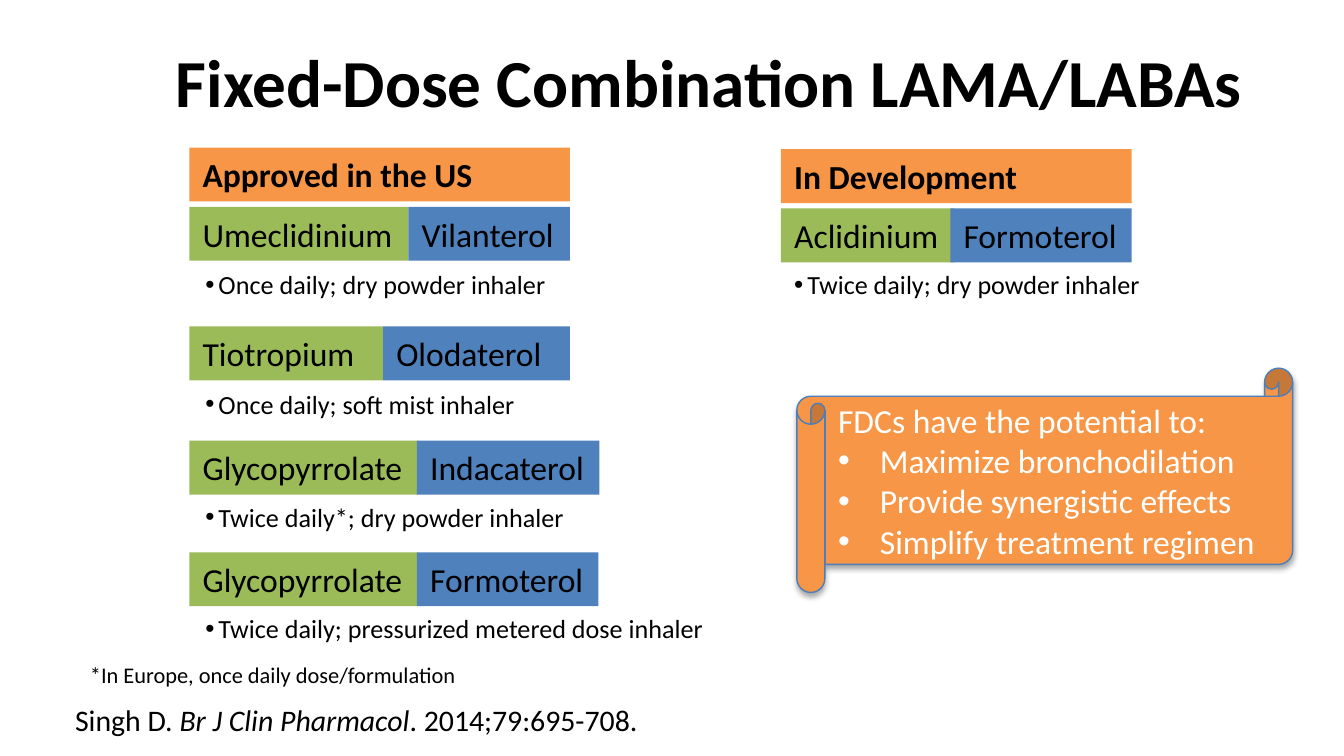
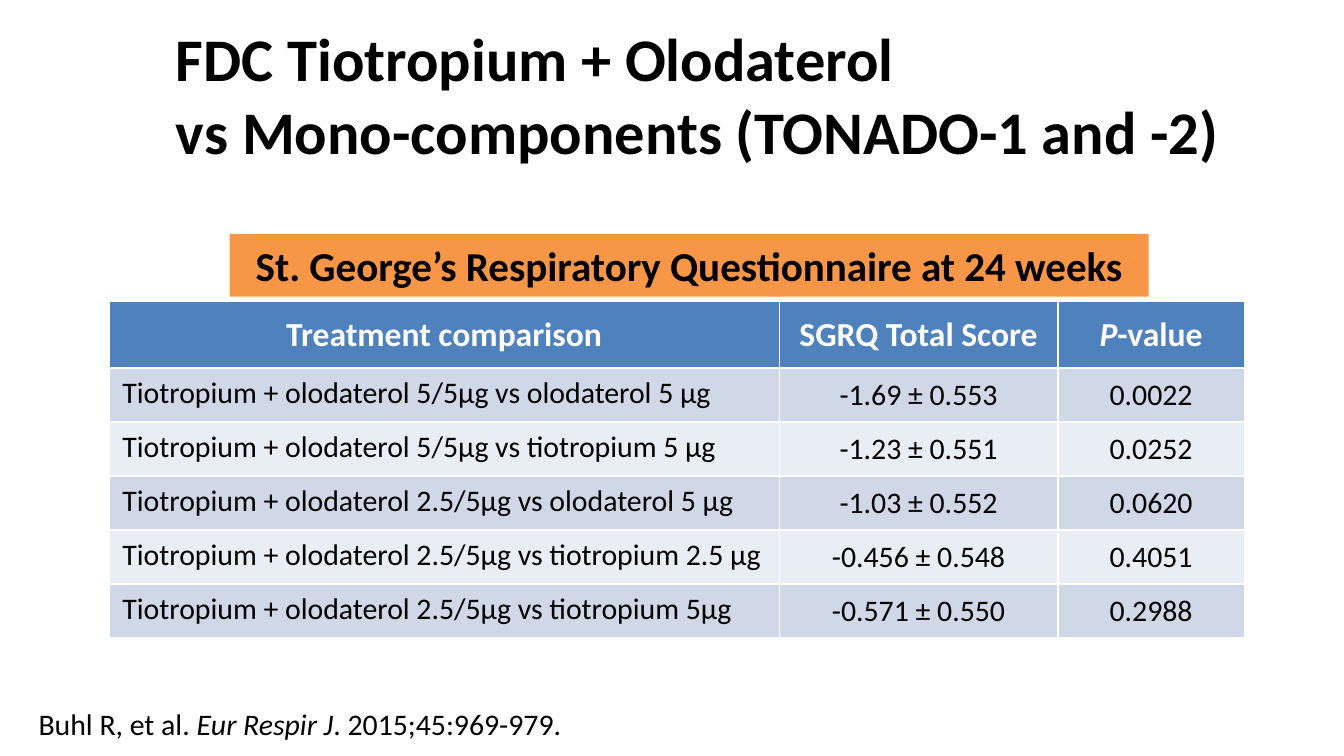
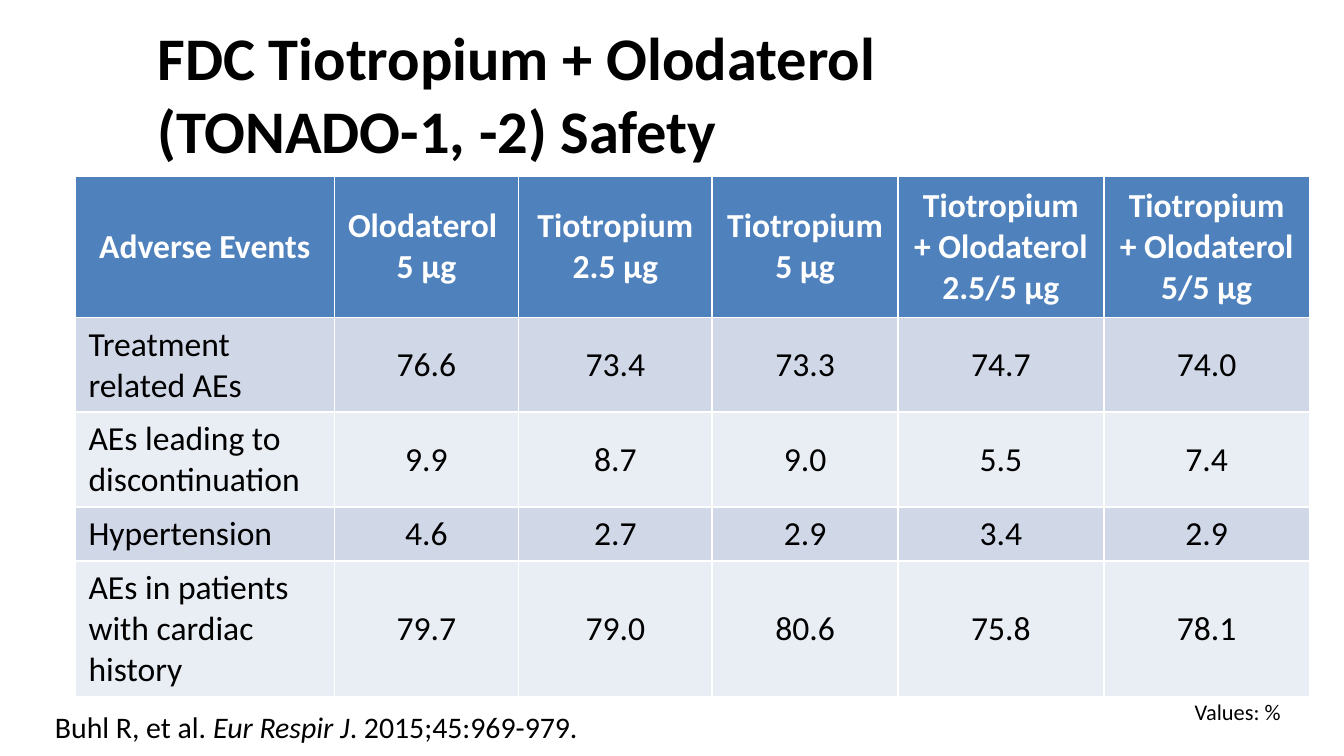
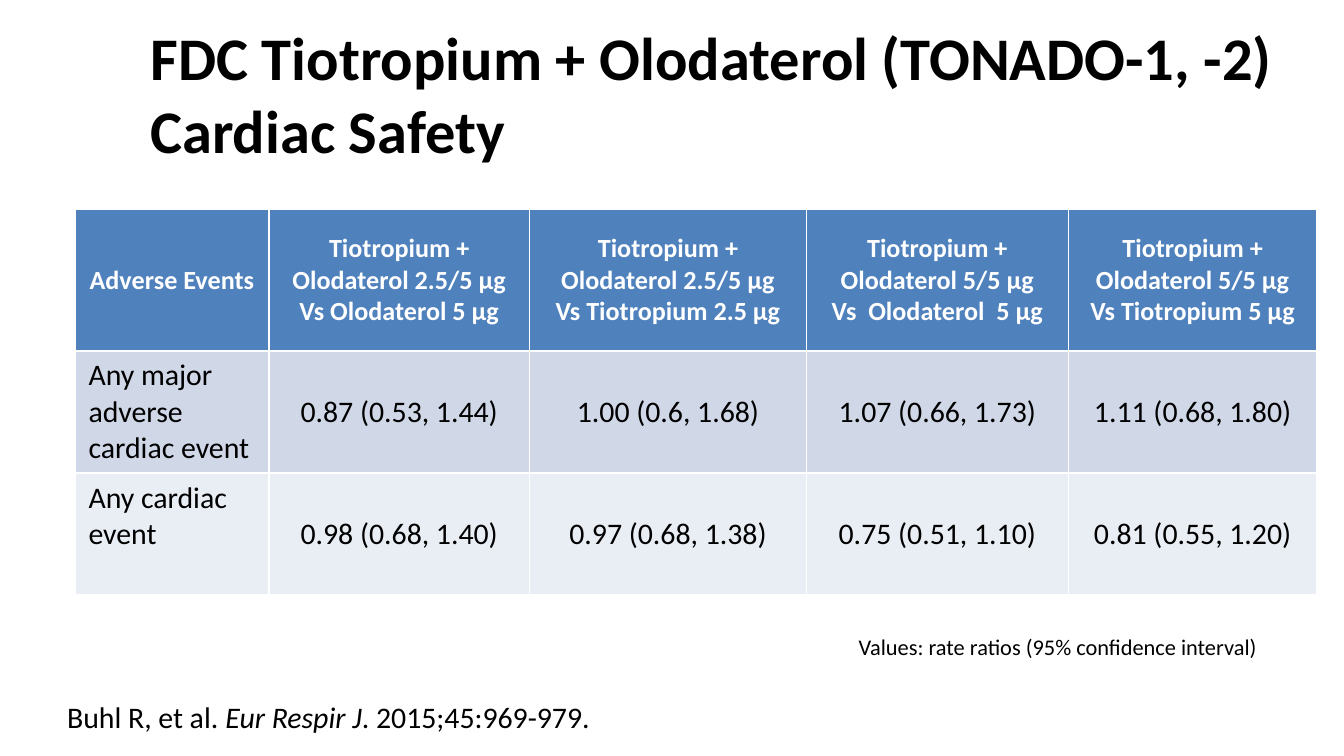
"""Build four slides on fixed-dose LAMA/LABA combinations."""
from copy import deepcopy

from lxml.etree import SubElement
from pptx import Presentation
from pptx.dml.color import RGBColor
from pptx.enum.shapes import MSO_SHAPE
from pptx.enum.text import MSO_ANCHOR, MSO_AUTO_SIZE, PP_ALIGN
from pptx.oxml.ns import qn
from pptx.util import Cm, Pt

FONT = "Calibri"
BLACK, WHITE = "000000", "FFFFFF"
ORANGE, GREEN, BLUE = "F79646", "9BBB59", "4F81BD"
BANDS = ("D0D8E8", "E9EDF4")
ROW_HEIGHT = 1.02
BOX_HEIGHT = 1.02
BULLET_HEIGHT = 0.86


def paint(fill, color):
    fill.solid()
    fill.fore_color.rgb = RGBColor.from_string(color)


def write(frame, text, size=18, bold=False, color=BLACK, align=PP_ALIGN.LEFT,
          anchor=MSO_ANCHOR.TOP, indents=()):
    """Fill a frame: newlines split paragraphs, \\v breaks lines, _ marks italics.

    Each entry of indents gives the left margin of one bulleted paragraph, or None.
    """
    frame.word_wrap = True
    frame.vertical_anchor = anchor
    for index, line in enumerate(text.split("\n")):
        para = frame.paragraphs[0] if index == 0 else frame.add_paragraph()
        para.alignment = align
        if indents and indents[index] is not None:
            properties = para._p.get_or_add_pPr()
            properties.set("marL", str(Cm(indents[index])))
            properties.set("indent", str(Cm(-0.79)))
            SubElement(properties, qn("a:buFont"), typeface="Arial")
            SubElement(properties, qn("a:buChar"), char="•")
        for row, part in enumerate(line.split("\v")):
            if row:
                para.add_line_break()
            for order, piece in enumerate(part.split("_")):
                if piece:
                    span = para.add_run()
                    span.text = piece
                    span.font.name = FONT
                    span.font.size = Pt(size)
                    span.font.bold = bold
                    span.font.italic = order % 2 == 1
                    paint(span.font.fill, color)
        for line_break in para._p.findall(qn("a:br")):
            line_break.append(deepcopy(span._r.rPr))


deck = Presentation()
deck.slide_width, deck.slide_height = Cm(25.4), Cm(14.29)

SINGH = "Singh D. _Br J Clin Pharmacol_. 2014;79:695-708."
BUHL = "Buhl R, et al. _Eur Respir J_. 2015;45:969-979."
openings = [
    ("Fixed-Dose Combination LAMA/LABAs", 36, (3.07, 0.33, 21.06), SINGH, (1.17, 13.13, 11.28)),
    ("FDC Tiotropium + Olodaterol \vvs Mono-components (TONADO-1 and -2)", 32.4,
     (3.07, 0.58, 21.06), BUHL, (0.48, 13.21, 10.57)),
    ("FDC Tiotropium + Olodaterol \v(TONADO-1, -2) Safety", 32.4,
     (2.72, 0.56, 22.35), BUHL, (0.79, 13.28, 10.57)),
    ("FDC Tiotropium + Olodaterol (TONADO-1, -2)\vCardiac Safety", 32.4,
     (2.59, 0.56, 22.35), BUHL, (1.02, 13.08, 10.57)),
]
pages = []
for heading, size, (left, top, width), citation, place in openings:
    page = deck.slides.add_slide(deck.slide_layouts[5])
    title = page.shapes.title
    title.left, title.top, title.width, title.height = Cm(left), Cm(top), Cm(width), Cm(2.39)
    title.text_frame.auto_size = MSO_AUTO_SIZE.NONE
    write(title.text_frame, heading, size=size, bold=True, anchor=MSO_ANCHOR.MIDDLE)
    box = page.shapes.add_textbox(*map(Cm, place), Cm(0.94))
    write(box.text_frame, citation, size=16)
    pages.append(page)
overview, efficacy, safety, cardiac = pages

notes = [
    (overview, "*In Europe, once daily dose/formulation", 1.45, 12.37, 7.49),
    (safety, "Values: %", 22.33, 13.08, 2.2),
    (cardiac, "Values: rate ratios (95% confidence interval)", 15.98, 11.84, 8.13),
]
for page, text, left, top, width in notes:
    box = page.shapes.add_textbox(Cm(left), Cm(top), Cm(width), Cm(0.76))
    write(box.text_frame, text, size=12)

banners = [
    (overview, "Approved in the US", 18, PP_ALIGN.LEFT, (3.58, 2.79, 7.19, BOX_HEIGHT)),
    (overview, "In Development", 18, PP_ALIGN.LEFT, (14.76, 2.82, 6.63, BOX_HEIGHT)),
    (efficacy, "St. George’s Respiratory Questionnaire at 24 weeks", 22, PP_ALIGN.CENTER,
     (4.34, 4.42, 17.37, 1.19)),
]
for page, text, size, align, place in banners:
    banner = page.shapes.add_shape(MSO_SHAPE.RECTANGLE, *map(Cm, place))
    banner.shadow.inherit = False
    paint(banner.fill, ORANGE)
    banner.line.fill.background()
    write(banner.text_frame, text, size=size, bold=True, align=align)

combinations = [
    (3.58, 3.91, "Umeclidinium", 4.14, 4.14, "Vilanterol", 3.05,
     "Once daily; dry powder inhaler", 3.63, 4.95, 7.54),
    (3.58, 6.17, "Tiotropium", 3.66, 3.66, "Olodaterol", 3.53,
     "Once daily; soft mist inhaler", 3.63, 7.21, 6.99),
    (3.58, 8.33, "Glycopyrrolate", 4.32, 4.3, "Indacaterol", 3.45,
     "Twice daily*; dry powder inhaler", 3.63, 9.35, 7.9),
    (3.58, 10.44, "Glycopyrrolate", 4.32, 4.3, "Formoterol", 3.43,
     "Twice daily; pressurized metered dose inhaler", 3.63, 11.46, 10.57),
    (14.76, 3.94, "Aclidinium", 3.28, 3.2, "Formoterol", 3.43,
     "Twice daily; dry powder inhaler", 14.76, 4.95, 7.9),
]
for (left, top, lama, lama_width, offset, laba, laba_width,
     dosing, dosing_left, dosing_top, dosing_width) in combinations:
    pair = overview.shapes.add_group_shape()
    for drug, drug_left, width, color in ((lama, left, lama_width, GREEN),
                                          (laba, left + offset, laba_width, BLUE)):
        box = pair.shapes.add_shape(MSO_SHAPE.RECTANGLE, Cm(drug_left), Cm(top),
                                    Cm(width), Cm(BOX_HEIGHT))
        box.shadow.inherit = False
        paint(box.fill, color)
        box.line.fill.background()
        write(box.text_frame, drug)
    box = overview.shapes.add_textbox(Cm(dosing_left), Cm(dosing_top),
                                      Cm(dosing_width), Cm(BULLET_HEIGHT))
    write(box.text_frame, dosing, size=14, indents=[0.25])

scroll = overview.shapes.add_shape(MSO_SHAPE.HORIZONTAL_SCROLL, Cm(15.06), Cm(6.96),
                                   Cm(9.37), Cm(4.24))
paint(scroll.fill, ORANGE)
paint(scroll.line.fill, "4B7EBC")
scroll.line.width = Pt(0.75)
scroll.shadow.inherit = False
effects = scroll._element.spPr.find(qn("a:effectLst"))
shadow = SubElement(effects, qn("a:outerShdw"), blurRad=str(Pt(3.1)), dist=str(Pt(1.8)),
                    dir="5400000", rotWithShape="0")
shade = SubElement(shadow, qn("a:srgbClr"), val=BLACK)
SubElement(shade, qn("a:alpha"), val="35000")
write(scroll.text_frame,
      "FDCs have the potential to:\nMaximize bronchodilation\n"
      "Provide synergistic effects\nSimplify treatment regimen",
      color=WHITE, anchor=MSO_ANCHOR.MIDDLE, indents=[None, 0.79, 0.79, 0.79])

efficacy_rows = [
    ("Treatment comparison", "SGRQ Total Score", "_P_-value"),
    ("Tiotropium + olodaterol 5/5µg vs olodaterol 5 µg", "-1.69 ± 0.553", "0.0022"),
    ("Tiotropium + olodaterol 5/5µg vs tiotropium 5 µg", "-1.23 ± 0.551", "0.0252"),
    ("Tiotropium + olodaterol 2.5/5µg vs olodaterol 5 µg", "-1.03 ± 0.552", "0.0620"),
    ("Tiotropium + olodaterol 2.5/5µg vs tiotropium 2.5 µg", "-0.456 ± 0.548", "0.4051"),
    ("Tiotropium + olodaterol 2.5/5µg vs tiotropium 5µg", "-0.571 ± 0.550", "0.2988"),
]
safety_rows = [
    ("Adverse Events", "Olodaterol \n5 µg", "Tiotropium 2.5 µg", "Tiotropium 5 µg",
     "Tiotropium + Olodaterol 2.5/5 µg", "Tiotropium + Olodaterol 5/5 µg"),
    ("Treatment related AEs", "76.6", "73.4", "73.3", "74.7", "74.0"),
    ("AEs leading to discontinuation", "9.9", "8.7", "9.0", "5.5", "7.4"),
    ("Hypertension", "4.6", "2.7", "2.9", "3.4", "2.9"),
    ("AEs in patients with cardiac history", "79.7", "79.0", "80.6", "75.8", "78.1"),
]
cardiac_rows = [
    ("Adverse Events",
     "Tiotropium + Olodaterol 2.5/5 µg\nVs Olodaterol 5 µg",
     "Tiotropium + Olodaterol 2.5/5 µg\nVs Tiotropium 2.5 µg",
     "Tiotropium + Olodaterol 5/5 µg\nVs  Olodaterol  5 µg",
     "Tiotropium + Olodaterol 5/5 µg\nVs Tiotropium 5 µg"),
    ("Any major adverse cardiac event", "0.87 (0.53, 1.44)", "1.00 (0.6, 1.68)",
     "1.07 (0.66, 1.73)", "1.11 (0.68, 1.80)"),
    ("Any cardiac event", "0.98 (0.68, 1.40)", "0.97 (0.68, 1.38)",
     "0.75 (0.51, 1.10)", "0.81 (0.55, 1.20)"),
]
tables = [
    (efficacy, efficacy_rows, 2.06, 5.69, (12.67, 5.26, 3.53), [1.27] + [ROW_HEIGHT] * 5, 18, 16),
    (safety, safety_rows, 1.42, 3.33, (4.9, 3.48, 3.66, 3.51, 3.89, 3.89),
     [2.67, 1.79, 1.79, ROW_HEIGHT, 2.57], 18, 18),
    (cardiac, cardiac_rows, 1.42, 3.96, (3.66, 4.93, 5.23, 4.95, 4.7),
     [2.67, 2.31, 2.31], 14, 16),
]
for page, rows, left, top, widths, heights, head_size, body_size in tables:
    table = page.shapes.add_table(len(rows), len(widths), Cm(left), Cm(top),
                                  Cm(sum(widths)), Cm(sum(heights))).table
    for column, width in zip(table.columns, widths):
        column.width = Cm(width)
    for row_index, (row, height) in enumerate(zip(rows, heights)):
        table.rows[row_index].height = Cm(height)
        head = row_index == 0
        for column_index, text in enumerate(row):
            cell = table.cell(row_index, column_index)
            label = column_index == 0 and not head
            paint(cell.fill, BLUE if head else BANDS[(row_index - 1) % 2])
            write(cell.text_frame, text, size=head_size if head else body_size, bold=head,
                  color=WHITE if head else BLACK,
                  align=PP_ALIGN.LEFT if label else PP_ALIGN.CENTER)
            cell.vertical_anchor = MSO_ANCHOR.TOP if label else MSO_ANCHOR.MIDDLE

deck.save("out.pptx")
